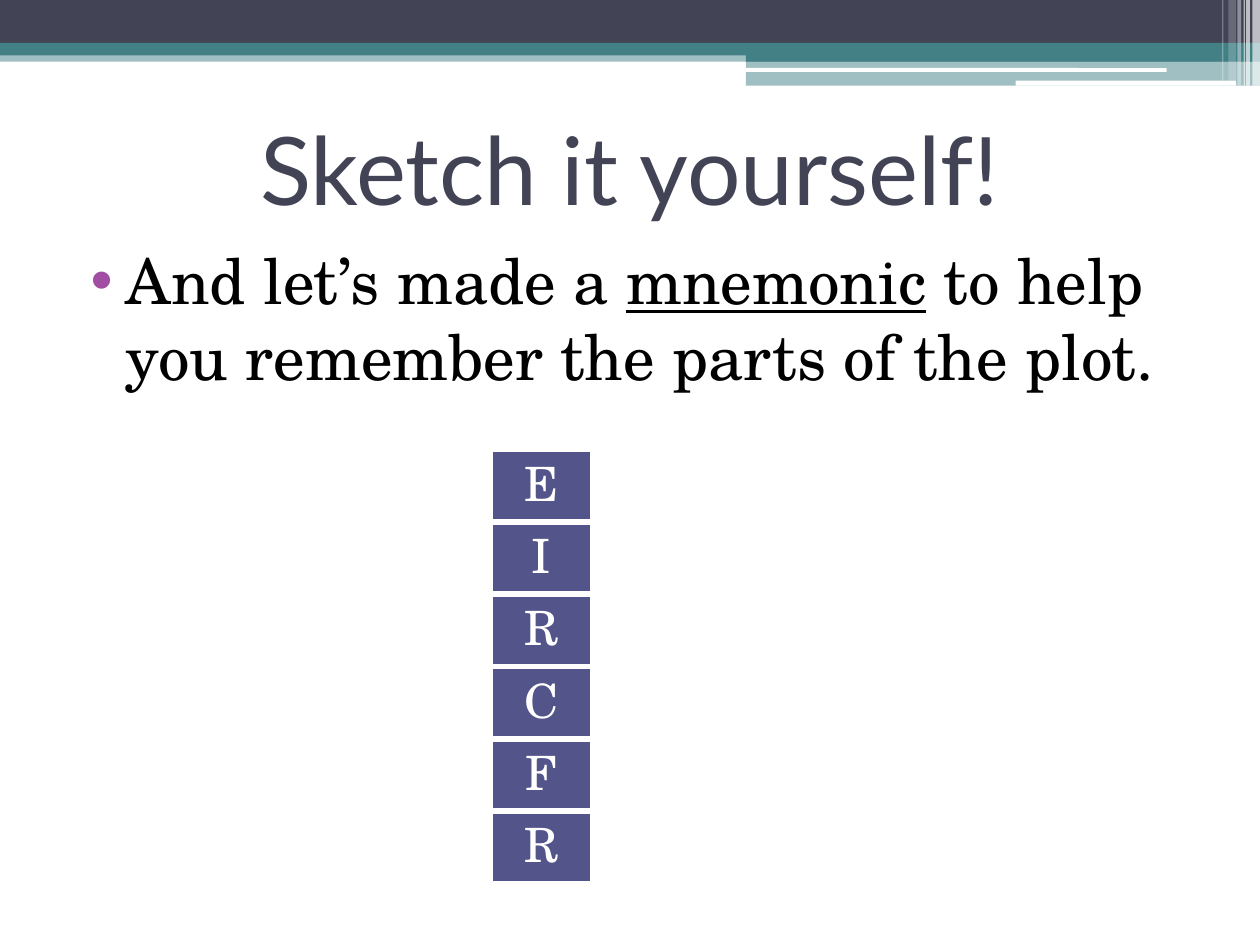
from dataclasses import dataclass

from lxml.etree import SubElement
from pptx import Presentation
from pptx.dml.color import RGBColor
from pptx.enum.shapes import MSO_SHAPE as Preset
from pptx.enum.text import MSO_ANCHOR as Anchor, PP_ALIGN as Align
from pptx.oxml.ns import qn
from pptx.shapes.autoshape import Shape
from pptx.slide import Slide
from pptx.text.text import Font
from pptx.util import Inches, Pt

COLORS = {
    "navy": "424456",
    "teal": "438086",
    "white": "FFFFFF",
    "black": "000000",
    "indigo": "53548A",
    "bullet": "A04DA3",
}
TITLE_FONT = "Lato"
BODY_FONT = "TeX Gyre Schola"

LETTERS = "EIRCFR"
FIRST_TOP, LAST_TOP = 3.58, 6.45
LETTER_PITCH = (LAST_TOP - FIRST_TOP) / (len(LETTERS) - 1)


@dataclass(frozen=True)
class Band:
    left: float
    top: float
    width: float
    height: float
    color: str
    opacity: int = 100
    rounded: bool = False


HEADER_BANDS = [
    Band(0, 0.4, 10, 0.09, "teal", 50),
    Band(0, 0, 10, 0.34, "navy"),
    Band(0, 0.34, 10, 0.1, "teal"),
    Band(5.92, 0.39, 4.08, 0.1, "teal"),
    Band(5.92, 0.48, 4.08, 0.2, "teal", 50),
    Band(5.91, 0.54, 3.35, 0.03, "white", rounded=True),
    Band(8.06, 0.64, 1.75, 0.04, "white", rounded=True),
    Band(9.94, 0, 0.06, 0.68, "white", 65),
    Band(9.89, 0, 0.03, 0.68, "white", 65),
    Band(9.87, 0, 0.01, 0.68, "white", 60),
    Band(9.82, 0, 0.03, 0.68, "white", 40),
    Band(9.75, 0, 0.06, 0.64, "white", 20),
    Band(9.7, 0, 0.01, 0.64, "white", 30),
]


def rgb(name: str) -> RGBColor:
    return RGBColor.from_string(COLORS[name])


def style_font(font: Font, name: str, size: float, color: str) -> None:
    font.name = name
    font.size = Pt(size)
    font.color.rgb = rgb(color)


def draw_band(slide: Slide, band: Band) -> Shape:
    preset = Preset.ROUNDED_RECTANGLE if band.rounded else Preset.RECTANGLE
    shape = slide.shapes.add_shape(
        preset, Inches(band.left), Inches(band.top), Inches(band.width), Inches(band.height)
    )
    shape.shadow.inherit = False
    shape.fill.solid()
    shape.fill.fore_color.rgb = rgb(band.color)
    shape.line.fill.background()
    if band.opacity < 100:
        fill_color = shape.fill._xPr.find(qn("a:solidFill"))[0]
        SubElement(fill_color, qn("a:alpha"), val=str(band.opacity * 1000))
    return shape


def draw_title(slide: Slide) -> None:
    title = slide.shapes.add_textbox(Inches(0.5), Inches(0.75), Inches(9), Inches(1.17))
    frame = title.text_frame
    frame.word_wrap = True
    frame.vertical_anchor = Anchor.MIDDLE
    frame.text = "Sketch it yourself!"
    heading = frame.paragraphs[0]
    heading.alignment = Align.CENTER
    style_font(heading.runs[0].font, TITLE_FONT, 54, "navy")


def add_bullet(paragraph, left: float, indent: float) -> None:
    properties = paragraph._p.get_or_add_pPr()
    properties.set("marL", str(Inches(left)))
    properties.set("indent", str(Inches(indent)))
    bullet_color = SubElement(properties, qn("a:buClr"))
    SubElement(bullet_color, qn("a:srgbClr"), val=COLORS["bullet"])
    SubElement(properties, qn("a:buFont"), typeface="Arial")
    SubElement(properties, qn("a:buChar"), char="•")


def draw_instruction(slide: Slide) -> None:
    body = slide.shapes.add_textbox(Inches(0.5), Inches(1.87), Inches(9.08), Inches(1.71))
    body.text_frame.word_wrap = True
    instruction = body.text_frame.paragraphs[0]
    add_bullet(instruction, 0.4, -0.28)
    for words, underlined in (
        ("And let’s made a ", False),
        ("mnemonic", True),
        (" to help you remember the parts of the plot.", False),
    ):
        run = instruction.add_run()
        run.text = words
        run.font.underline = underlined
        style_font(run.font, BODY_FONT, 36, "black")


def draw_letter(slide: Slide, letter: str, top: float) -> None:
    tile = draw_band(slide, Band(3.9, top, 0.79, 0.55, "indigo"))
    tile.line.color.rgb = rgb("white")
    tile.line.width = Pt(1.5)
    frame = tile.text_frame
    frame.margin_left = frame.margin_right = Inches(0.07)
    frame.margin_top = frame.margin_bottom = Inches(0.07)
    frame.vertical_anchor = Anchor.MIDDLE
    frame.text = letter
    initial = frame.paragraphs[0]
    initial.alignment = Align.CENTER
    initial.line_spacing = 0.9
    style_font(initial.runs[0].font, BODY_FONT, 27, "white")


def main() -> None:
    deck = Presentation()
    deck.slide_width, deck.slide_height = Inches(10), Inches(7.5)
    slide = deck.slides.add_slide(deck.slide_layouts[6])
    for band in HEADER_BANDS:
        draw_band(slide, band)
    draw_title(slide)
    draw_instruction(slide)
    for row, letter in enumerate(LETTERS):
        draw_letter(slide, letter, FIRST_TOP + row * LETTER_PITCH)
    deck.save("out.pptx")


if __name__ == "__main__":
    main()
